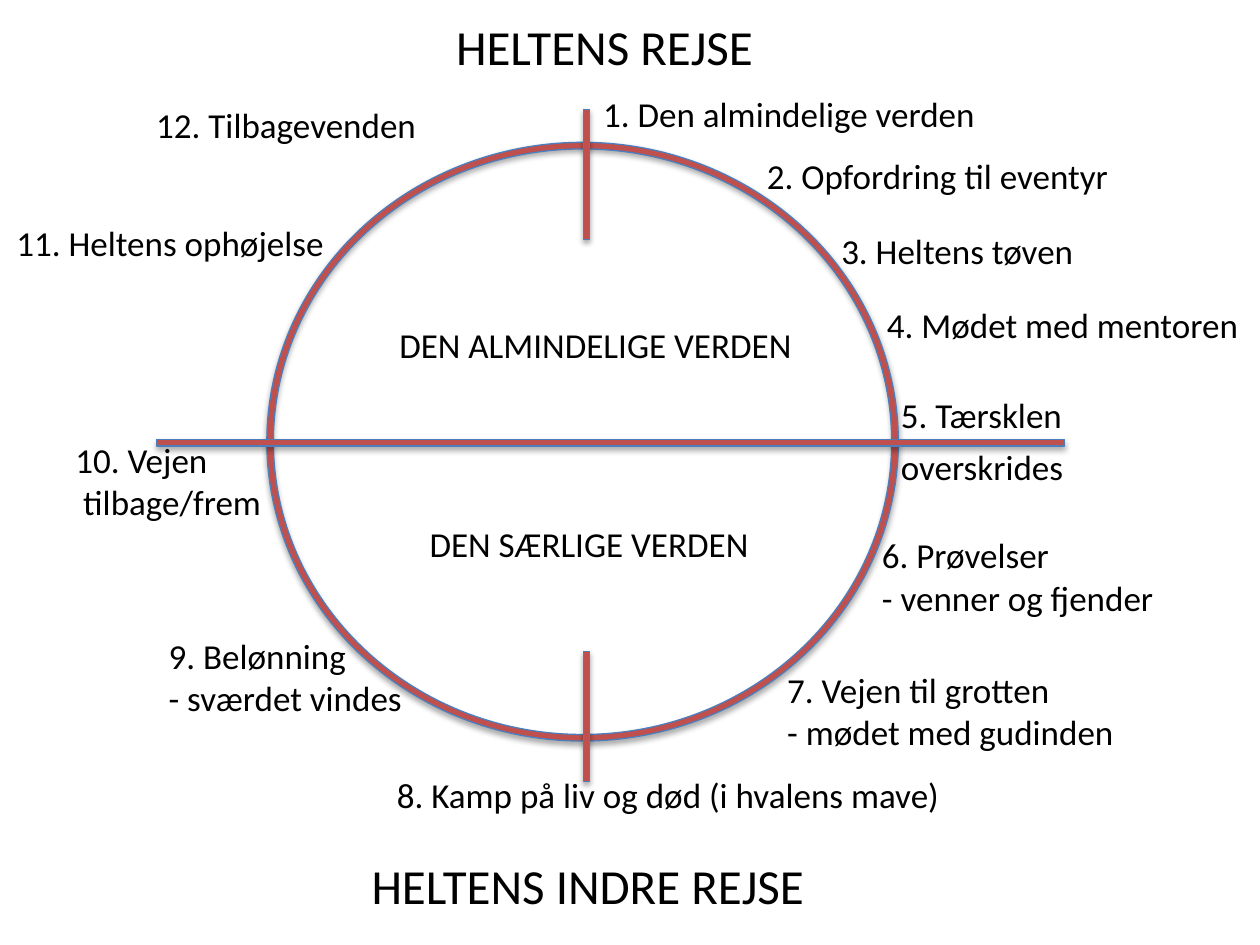
import pptx
import pptx.dml.color
import pptx.enum.shapes
import pptx.enum.text
import pptx.oxml
import pptx.oxml.ns
import pptx.util
from dataclasses import dataclass

Cm = pptx.util.Cm
Pt = pptx.util.Pt
Shapes = pptx.enum.shapes.MSO_SHAPE


@dataclass(frozen=True)
class Theme:
    font: str = "Calibri"
    text: str = "000000"
    ring: str = "C0504D"
    outline: str = "4B7EBC"
    heading: int = 28
    label: int = 20


THEME = Theme()

SHADOW = (
    f'<a:outerShdw {pptx.oxml.ns.nsdecls("a")} blurRad="40000" dist="23000" dir="5400000" rotWithShape="0">'
    '<a:srgbClr val="000000"><a:alpha val="35000"/></a:srgbClr></a:outerShdw>'
)

BAR = 0.13
AXIS_LEFT = 11.76
TICK = 2.62
LINE = 1.12
TWO_LINES = 1.96

WORLDS = [
    ("DEN ALMINDELIGE VERDEN", 7.8, 6.4, 9.6, LINE),
    ("DEN SÆRLIGE VERDEN", 8.41, 10.41, 7.9, LINE),
]

STAGES = [
    ("1. Den almindelige verden", 11.91, 1.75, 8.71, LINE),
    ("2. Opfordring til eventyr", 15.21, 3, 7.95, LINE),
    ("3. Heltens tøven", 16.71, 4.5, 5.54, TWO_LINES),
    ("4. Mødet med mentoren", 17.63, 5.99, 8, TWO_LINES),
    ("5. Tærsklen\noverskrides", 17.91, 7.8, 4.01, 2.18),
    ("6. Prøvelser\v- venner og fjender", 17.53, 10.64, 6.32, TWO_LINES),
    ("7. Vejen til grotten\v- mødet med gudinden", 15.62, 13.36, 7.52, TWO_LINES),
    ("8. Kamp på liv og død (i hvalens mave)", 7.75, 15.47, 12.45, LINE),
    ("9. Belønning\v- sværdet vindes", 3.15, 12.67, 5.51, 2.82),
    ("10. Vejen\v tilbage/frem", 1.27, 8.71, 4.34, TWO_LINES),
    ("11. Heltens ophøjelse", 0.08, 4.34, 7.21, LINE),
    ("12. Tilbagevenden", 2.9, 1.96, 6.1, LINE),
]


def color(value):
    return pptx.dml.color.RGBColor.from_string(value)


def write(frame, words, size):
    frame.text = words
    frame.word_wrap = False
    frame.auto_size = pptx.enum.text.MSO_AUTO_SIZE.SHAPE_TO_FIT_TEXT
    frame.vertical_anchor = pptx.enum.text.MSO_ANCHOR.TOP
    for index, paragraph in enumerate(frame.paragraphs):
        paragraph.alignment = pptx.enum.text.PP_ALIGN.LEFT
        paragraph.space_before = Pt(6 if index else 0)
        for run in paragraph.runs:
            run.font.name = THEME.font
            run.font.size = Pt(size)
            run.font.color.rgb = color(THEME.text)


def add_title(slide, words, left, top, width, height):
    title = slide.shapes.title
    title.left, title.top = Cm(left), Cm(top)
    title.width, title.height = Cm(width), Cm(height)
    write(title.text_frame, words, THEME.heading)


def add_label(slide, words, left, top, width, height, size=THEME.label):
    label = slide.shapes.add_textbox(Cm(left), Cm(top), Cm(width), Cm(height))
    write(label.text_frame, words, size)


def add_part(slide, preset, left, top, width, height):
    part = slide.shapes.add_shape(preset, Cm(left), Cm(top), Cm(width), Cm(height))
    part.fill.solid()
    part.fill.fore_color.rgb = color(THEME.ring)
    part.line.color.rgb = color(THEME.outline)
    part.line.width = Pt(0.75)
    part.shadow.inherit = False
    effects = part._element.spPr.find(pptx.oxml.ns.qn("a:effectLst"))
    effects.append(pptx.oxml.parse_xml(SHADOW))
    return part


def add_circle(slide):
    circle = add_part(slide, Shapes.DONUT, 5.38, 2.87, 12.73, 12.07)
    circle.adjustments[0] = 0.011
    add_part(slide, Shapes.RECTANGLE, 3.15, 8.86, 18.31, BAR)
    for tick_top in (2.21, 13.13):
        add_part(slide, Shapes.RECTANGLE, AXIS_LEFT, tick_top, BAR, TICK)


def main():
    deck = pptx.Presentation()
    deck.slide_width, deck.slide_height = Cm(25.4), Cm(19.05)
    journey = deck.slides.add_slide(deck.slide_layouts[5])
    add_title(journey, "HELTENS REJSE", 8.94, 0.2, 7.19, 2.64)
    add_circle(journey)
    for label in WORLDS + STAGES:
        add_label(journey, *label)
    add_label(journey, "HELTENS INDRE REJSE", 7.24, 17.12, 10.39, 1.45, THEME.heading)
    deck.save("out.pptx")


if __name__ == "__main__":
    main()
